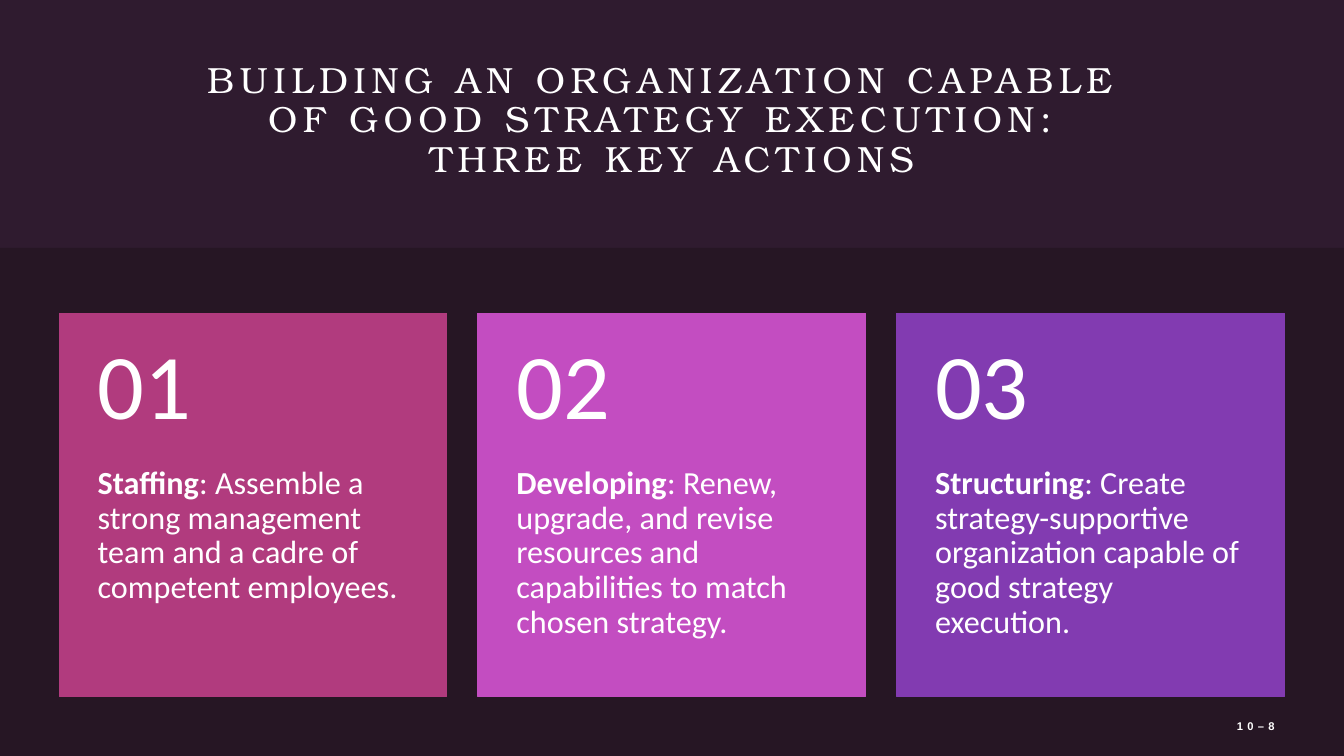
from dataclasses import dataclass

import pptx
import pptx.dml.color
import pptx.enum.shapes
import pptx.enum.text
import pptx.slide
import pptx.util

Pt = pptx.util.Pt
Align = pptx.enum.text.PP_ALIGN
Anchor = pptx.enum.text.MSO_ANCHOR


@dataclass(frozen=True)
class Theme:
    background: str = "2F1B2F"
    panel: str = "261624"
    text: str = "FFFFFF"
    title_font: str = "TeX Gyre Bonum"
    body_font: str = "Calibri"
    footer_font: str = "Arial"
    title_size: float = 26
    number_size: float = 66
    body_size: float = 23
    footer_size: float = 8


@dataclass(frozen=True)
class Box:
    left: float
    top: float
    width: float
    height: float

    def lengths(self) -> tuple[int, ...]:
        return Pt(self.left), Pt(self.top), Pt(self.width), Pt(self.height)


@dataclass(frozen=True)
class TextStyle:
    font: str
    size: float
    align: Align = Align.LEFT
    anchor: Anchor = Anchor.MIDDLE
    margins: tuple[float, float, float, float] = (0, 0, 0, 0)
    line_spacing: float = 0.9
    letter_spacing: float = 0
    bold: bool = False


@dataclass(frozen=True)
class Action:
    name: str
    description: str
    color: str


THEME = Theme()
TITLE = TextStyle(THEME.title_font, THEME.title_size, Align.CENTER, letter_spacing=4)
FOOTER = TextStyle(THEME.footer_font, THEME.footer_size, Align.RIGHT,
                   margins=(7.2, 3.6, 7.2, 3.6), line_spacing=1, letter_spacing=3, bold=True)
NUMBER = TextStyle(THEME.body_font, THEME.number_size, margins=(27.5, 13, 27.5, 13))
BODY = TextStyle(THEME.body_font, THEME.body_size, anchor=Anchor.TOP,
                 margins=(27.5, 0, 27.5, 26))

SLIDE = Box(0, 0, 960, 540)
PANEL_TOP = 177
FIRST_CARD = Box(42.3, 223.7, 277, 273.9)
CARD_STEP = 299.1
NUMBER_HEIGHT = 109.6

ACTIONS = (
    Action("Staffing", "Assemble a strong management team and a cadre of competent employees.",
           "B13B7E"),
    Action("Developing", "Renew, upgrade, and revise resources and capabilities to match "
           "chosen strategy.", "C34DC1"),
    Action("Structuring", "Create strategy-supportive organization capable of good strategy "
           "execution.", "823BB1"),
)


def rgb(color: str) -> pptx.dml.color.RGBColor:
    return pptx.dml.color.RGBColor.from_string(color)


def add_rectangle(slide: pptx.slide.Slide, box: Box, color: str, outlined: bool) -> None:
    shape = slide.shapes.add_shape(pptx.enum.shapes.MSO_SHAPE.RECTANGLE, *box.lengths())
    shape.shadow.inherit = False
    shape.fill.solid()
    shape.fill.fore_color.rgb = rgb(color)
    if outlined:
        shape.line.color.rgb = rgb(color)
        shape.line.width = Pt(0.75)
    else:
        shape.line.fill.background()


def add_text(slide: pptx.slide.Slide, box: Box, style: TextStyle, text: str,
             bold_lead: str = "") -> None:
    frame = slide.shapes.add_textbox(*box.lengths()).text_frame
    frame.word_wrap = True
    frame.vertical_anchor = style.anchor
    frame.margin_left, frame.margin_top, frame.margin_right, frame.margin_bottom = map(
        Pt, style.margins)
    paragraph = frame.paragraphs[0]
    paragraph.alignment = style.align
    paragraph.line_spacing = style.line_spacing
    paragraph.font.name = style.font
    paragraph.font.size = Pt(style.size)
    paragraph.font.color.rgb = rgb(THEME.text)
    if style.bold:
        paragraph.font.bold = True
    if style.letter_spacing:
        properties = paragraph._p.get_or_add_pPr().get_or_add_defRPr()
        properties.set("spc", str(round(style.letter_spacing * 100)))
    if bold_lead:
        lead = paragraph.add_run()
        lead.text = bold_lead
        lead.font.bold = True
    for index, line in enumerate(text.split("\n")):
        if index:
            paragraph.add_line_break()
        paragraph.add_run().text = line


def add_card(slide: pptx.slide.Slide, index: int, action: Action) -> None:
    left = FIRST_CARD.left + index * CARD_STEP
    top, width, height = FIRST_CARD.top, FIRST_CARD.width, FIRST_CARD.height
    add_rectangle(slide, Box(left, top, width, height), action.color, outlined=True)
    add_text(slide, Box(left, top + NUMBER_HEIGHT, width, height - NUMBER_HEIGHT), BODY,
             f": {action.description}", bold_lead=action.name)
    add_text(slide, Box(left, top, width, NUMBER_HEIGHT), NUMBER, f"{index + 1:02d}")


def main() -> None:
    """Build the slide of three key actions and save it."""
    presentation = pptx.Presentation()
    presentation.slide_width, presentation.slide_height = Pt(SLIDE.width), Pt(SLIDE.height)
    slide = presentation.slides.add_slide(presentation.slide_layouts[6])
    slide.background.fill.solid()
    slide.background.fill.fore_color.rgb = rgb(THEME.background)
    add_text(slide, Box(85, 42.3, 790, 88.6), TITLE,
             "BUILDING AN ORGANIZATION CAPABLE \nOF GOOD STRATEGY EXECUTION: \n"
             "THREE KEY ACTIONS")
    add_rectangle(slide, Box(0, PANEL_TOP, SLIDE.width, SLIDE.height - PANEL_TOP),
                  THEME.panel, outlined=False)
    add_text(slide, Box(744, 504, 173.5, 29), FOOTER, "10–8")
    for index, action in enumerate(ACTIONS):
        add_card(slide, index, action)
    presentation.save("out.pptx")


if __name__ == "__main__":
    main()
